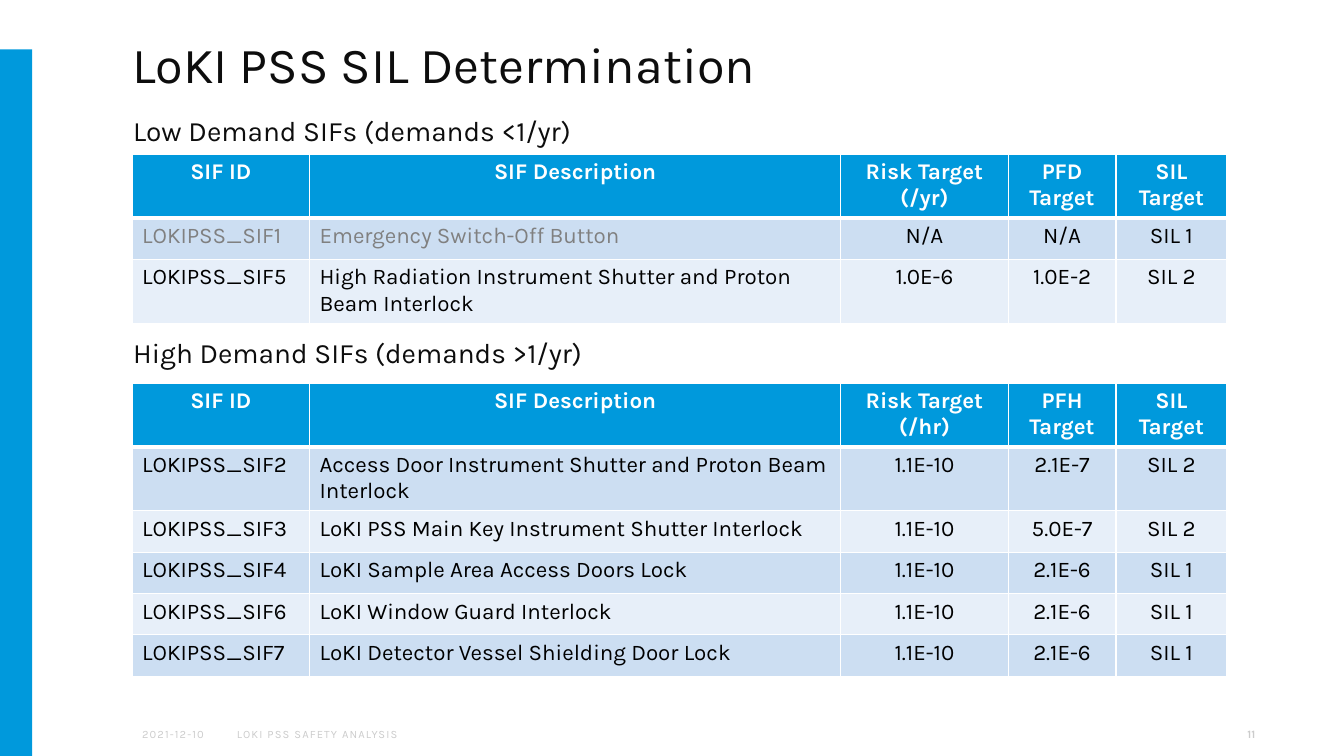
from dataclasses import dataclass

from lxml.etree import SubElement
from pptx import Presentation
from pptx.dml.color import RGBColor
from pptx.enum.shapes import MSO_SHAPE
from pptx.enum.text import MSO_ANCHOR, MSO_AUTO_SIZE, PP_ALIGN
from pptx.oxml.ns import qn
from pptx.util import Inches, Pt


@dataclass(frozen=True)
class Theme:
    font: str = "Karla"
    accent: str = "0099DC"
    white: str = "FFFFFF"
    ink: str = "0D0D0D"
    black: str = "000000"
    muted: str = "808080"
    footer: str = "CCCCCC"
    bands: tuple = ("CCDEF2", "E7EFF9")
    title_size: int = 36
    heading_size: int = 20
    cell_size: int = 16
    footer_size: int = 8


THEME = Theme()
SLIDE_WIDTH = Inches(13.33)
SLIDE_HEIGHT = Inches(7.5)
TABLE_LEFT = 9.83
COLUMN_SHARES = (13.2, 39.53, 12.45, 8.03, 8.25)
ROW_SHARE = 5.47
FOOTER_TOP, FOOTER_HEIGHT = 94.4, 5.33

LOW_DEMAND = [
    ("SIF ID", "SIF Description", "Risk Target (/yr)", "PFD Target", "SIL Target"),
    ("LOKIPSS_SIF1", "Emergency Switch-Off Button", "N/A", "N/A", "SIL 1"),
    ("LOKIPSS_SIF5", "High Radiation Instrument Shutter and Proton Beam Interlock",
     "1.0E-6", "1.0E-2", "SIL 2"),
]
HIGH_DEMAND = [
    ("SIF ID", "SIF Description", "Risk Target (/hr)", "PFH Target", "SIL Target"),
    ("LOKIPSS_SIF2", "Access Door Instrument Shutter and Proton Beam Interlock",
     "1.1E-10", "2.1E-7", "SIL 2"),
    ("LOKIPSS_SIF3", "LoKI PSS Main Key Instrument Shutter Interlock",
     "1.1E-10", "5.0E-7", "SIL 2"),
    ("LOKIPSS_SIF4", "LoKI Sample Area Access Doors Lock", "1.1E-10", "2.1E-6", "SIL 1"),
    ("LOKIPSS_SIF6", "LoKI Window Guard Interlock", "1.1E-10", "2.1E-6", "SIL 1"),
    ("LOKIPSS_SIF7", "LoKI Detector Vessel Shielding Door Lock",
     "1.1E-10", "2.1E-6", "SIL 1"),
]
INACTIVE_SIFS = {"LOKIPSS_SIF1"}


def across(percent):
    return round(SLIDE_WIDTH * percent / 100)


def down(percent):
    return round(SLIDE_HEIGHT * percent / 100)


def area(left, top, width, height):
    return across(left), down(top), across(width), down(height)


def style(paragraph, size, color, bold=False, align=PP_ALIGN.LEFT):
    paragraph.alignment = align
    font = paragraph.font
    font.name = THEME.font
    font.size = Pt(size)
    font.bold = bold
    font.color.rgb = RGBColor.from_string(color)


def place(placeholder, bounds, insets):
    placeholder.left, placeholder.top, placeholder.width, placeholder.height = bounds
    frame = placeholder.text_frame
    frame.auto_size = MSO_AUTO_SIZE.NONE
    frame.word_wrap = True
    (frame.margin_left, frame.margin_top,
     frame.margin_right, frame.margin_bottom) = map(Inches, insets)
    return frame


def add_side_bar(slide):
    bar = slide.shapes.add_shape(MSO_SHAPE.RECTANGLE, *area(0, 6.53, 2.4, 93.47))
    bar.shadow.inherit = False
    bar.fill.solid()
    bar.fill.fore_color.rgb = RGBColor.from_string(THEME.accent)
    bar.line.fill.background()


def fill_title(slide, text):
    frame = place(slide.shapes.title, area(9.08, 3.87, 76.82, 9.6), (0.1, 0.05, 0.1, 0.02))
    frame.vertical_anchor = MSO_ANCHOR.MIDDLE
    frame.text = text
    heading = frame.paragraphs[0]
    heading.line_spacing = 0.9
    style(heading, THEME.title_size, THEME.ink)


def fill_headings(slide, headings, gap):
    frame = place(slide.placeholders[1], area(9.08, 14.4, 85.22, 69.47), (0, 0.05, 0.02, 0.05))
    frame.vertical_anchor = MSO_ANCHOR.TOP
    frame.text = "\n".join(headings)
    for position, heading in enumerate(frame.paragraphs):
        heading.space_before = Pt(gap if position else 0)
        properties = heading._p.get_or_add_pPr()
        properties.set("marL", str(Inches(0.11)))
        properties.set("indent", "0")
        SubElement(properties, qn("a:buNone"))
        style(heading, THEME.heading_size, THEME.ink)


def add_footer(slide, text, left, width, align=PP_ALIGN.LEFT, bold=False, tracking=0):
    frame = slide.shapes.add_textbox(
        *area(left, FOOTER_TOP, width, FOOTER_HEIGHT)).text_frame
    frame.word_wrap = True
    frame.vertical_anchor = MSO_ANCHOR.MIDDLE
    frame.text = text
    line = frame.paragraphs[0]
    style(line, THEME.footer_size, THEME.footer, bold, align)
    if tracking:
        line.runs[0]._r.get_or_add_rPr().set("spc", str(round(tracking * 100)))


def set_borders(cell, bottom):
    properties = cell._tc.get_or_add_tcPr()
    for side, width in (("L", 1), ("R", 1), ("T", 1), ("B", bottom)):
        border = SubElement(properties, qn(f"a:ln{side}"), w=str(Pt(width)))
        fill = SubElement(border, qn("a:solidFill"))
        SubElement(fill, qn("a:srgbClr"), val=THEME.white)


def fill_cell(cell, text, fill, color, bold, align, bottom):
    set_borders(cell, bottom)
    cell.fill.solid()
    cell.fill.fore_color.rgb = RGBColor.from_string(fill)
    cell.text = text
    style(cell.text_frame.paragraphs[0], THEME.cell_size, color, bold, align)


def add_sif_table(slide, top, records):
    table = slide.shapes.add_table(
        len(records), len(COLUMN_SHARES),
        *area(TABLE_LEFT, top, sum(COLUMN_SHARES), ROW_SHARE * len(records))).table
    for column, share in zip(table.columns, COLUMN_SHARES):
        column.width = across(share)
    for row, record in enumerate(records):
        table.rows[row].height = down(ROW_SHARE)
        header = row == 0
        fill = THEME.accent if header else THEME.bands[(row - 1) % 2]
        for column, text in enumerate(record):
            descriptive = column < 2
            inactive = descriptive and record[0] in INACTIVE_SIFS
            color = THEME.white if header else THEME.muted if inactive else THEME.black
            align = PP_ALIGN.LEFT if descriptive and not header else PP_ALIGN.CENTER
            fill_cell(table.cell(row, column), text, fill, color, header, align,
                      3 if header else 1)


def main():
    deck = Presentation()
    deck.slide_width = SLIDE_WIDTH
    deck.slide_height = SLIDE_HEIGHT
    slide = deck.slides.add_slide(deck.slide_layouts[1])
    add_side_bar(slide)
    fill_title(slide, "LoKI PSS SIL Determination")
    fill_headings(slide, ["Low Demand SIFs (demands <1/yr)",
                          "High Demand SIFs (demands >1/yr)"], gap=134)
    add_footer(slide, "2021-12-10", TABLE_LEFT, 6.83, tracking=0.8)
    add_footer(slide, "LOKI PSS SAFETY ANALYSIS", 16.88, 35.41, tracking=0.8)
    add_footer(slide, "11", 71.64, 22.5, PP_ALIGN.RIGHT, bold=True)
    add_sif_table(slide, 20.4, LOW_DEMAND)
    add_sif_table(slide, 50.67, HIGH_DEMAND)
    deck.save("out.pptx")


if __name__ == "__main__":
    main()
